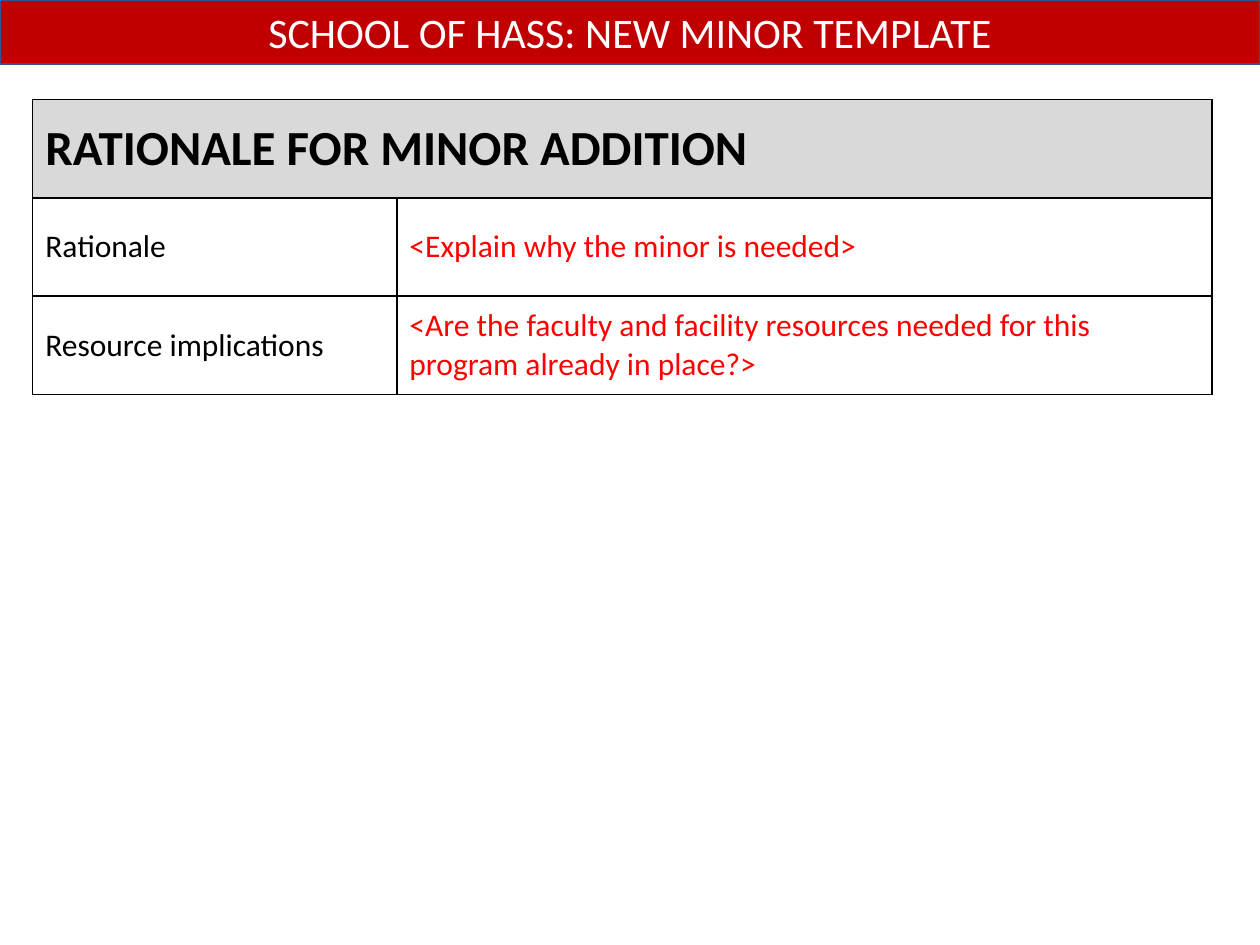
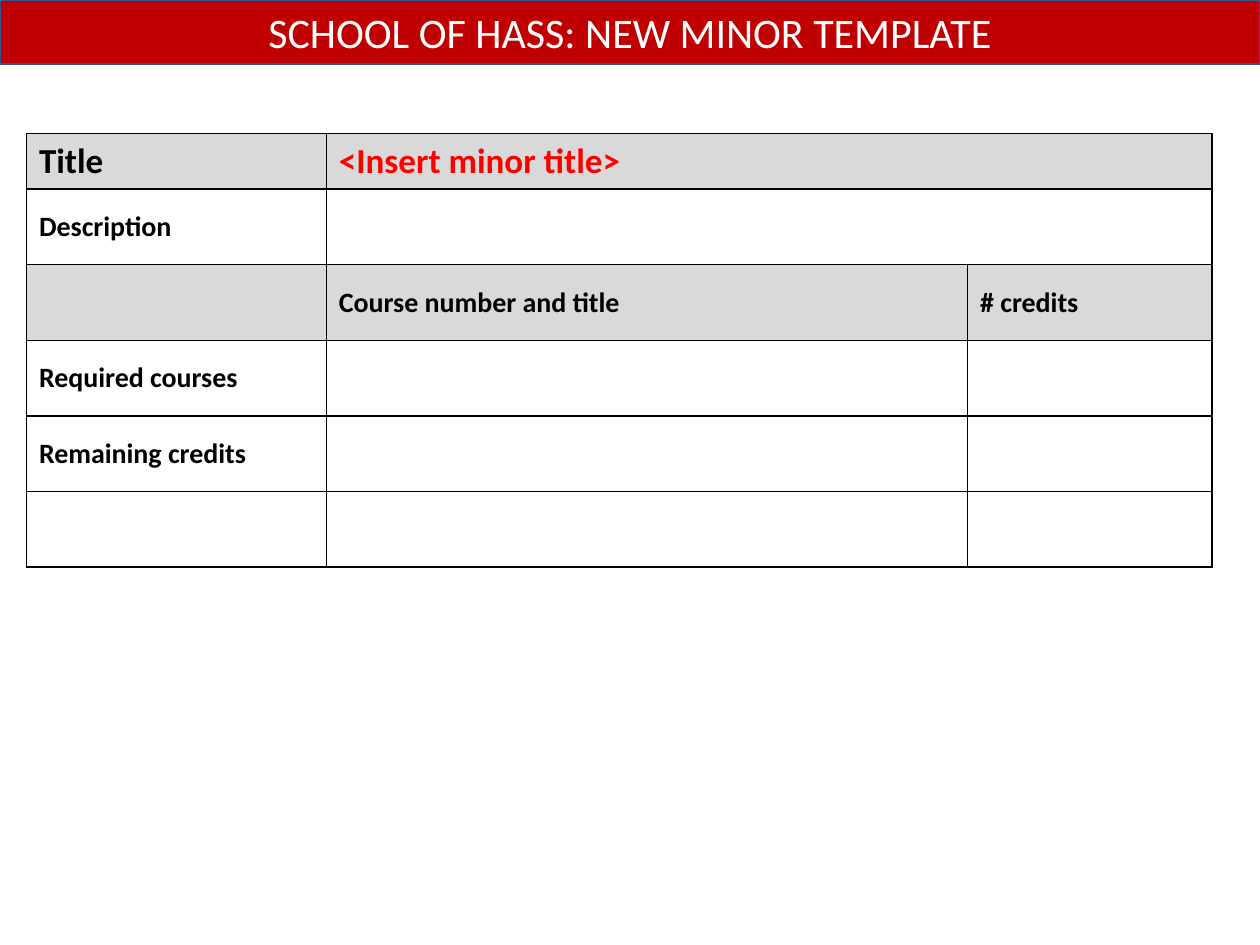
from dataclasses import dataclass

from lxml.etree import SubElement
from pptx import Presentation
from pptx.dml.color import RGBColor
from pptx.enum.text import MSO_ANCHOR, MSO_AUTO_SIZE, PP_ALIGN
from pptx.oxml.ns import qn
from pptx.util import Inches, Pt


@dataclass(frozen=True)
class Theme:
    font: str = "Calibri"
    band: str = "C00000"
    band_edge: str = "325491"
    band_text: str = "FFFFFF"
    header: str = "D9D9D9"
    ink: str = "000000"
    prompt: str = "FF0000"
    title: int = 24
    heading: int = 28
    minor_title: int = 20
    body: int = 18
    label: int = 16
    rule: int = 1


THEME = Theme()
SLIDE_SIZE = (10, 7.5)
BAND_HEIGHT = 0.51
SCHOOL_TITLE = "SCHOOL OF HASS: NEW MINOR TEMPLATE"

RATIONALE = {
    "at": (0.26, 0.79),
    "columns": [2.89, 6.47],
    "heights": [0.78] * 3,
    "rows": [
        ["RATIONALE FOR MINOR ADDITION", ""],
        ["Rationale", "<Explain why the minor is needed>"],
        ["Resource implications",
         "<Are the faculty and facility resources needed for this program already in place?>"],
    ],
    "sizes": [THEME.heading, THEME.body, THEME.body],
    "bold_rows": {0},
    "shaded_rows": {0},
    "top_rows": set(),
    "merges": [((0, 0), (0, 1))],
}

MINOR = {
    "at": (0.21, 1.06),
    "columns": [2.38, 5.09, 1.94],
    "heights": [0.43] + [0.6] * 5,
    "rows": [
        ["Title", "<Insert minor title>", ""],
        ["Description", "", ""],
        ["", "Course number and title", "# credits"],
        ["Required courses", "", ""],
        ["Remaining credits", "", ""],
        ["", "", ""],
    ],
    "sizes": [THEME.minor_title] + [THEME.label] * 5,
    "bold_rows": set(range(6)),
    "shaded_rows": {0, 2},
    "top_rows": {0},
    "merges": [((0, 1), (0, 2)), ((1, 1), (1, 2))],
}


def rgb(color):
    return RGBColor.from_string(color)


def add_text(paragraph, words, size, color, bold=False):
    run = paragraph.add_run()
    run.text = words
    run.font.name = THEME.font
    run.font.size = Pt(size)
    run.font.bold = bold
    run.font.color.rgb = rgb(color)


def add_band(slide):
    band = slide.shapes.title
    band.left = band.top = 0
    band.width, band.height = Inches(SLIDE_SIZE[0]), Inches(BAND_HEIGHT)
    band.fill.solid()
    band.fill.fore_color.rgb = rgb(THEME.band)
    band.line.color.rgb = rgb(THEME.band_edge)
    band.line.width = Pt(THEME.rule)
    frame = band.text_frame
    frame.auto_size = MSO_AUTO_SIZE.NONE
    frame.word_wrap = True
    frame.vertical_anchor = MSO_ANCHOR.MIDDLE
    frame.paragraphs[0].alignment = PP_ALIGN.CENTER
    add_text(frame.paragraphs[0], SCHOOL_TITLE, THEME.title, THEME.band_text)


def add_borders(cell):
    properties = cell._tc.get_or_add_tcPr()
    for position, side in enumerate(("a:lnL", "a:lnR", "a:lnT", "a:lnB")):
        border = SubElement(properties, qn(side), w=str(Pt(THEME.rule)))
        fill = SubElement(border, qn("a:solidFill"))
        SubElement(fill, qn("a:srgbClr"), val=THEME.ink)
        properties.insert(position, border)


def add_form(slide, form):
    columns, heights = form["columns"], form["heights"]
    box = (*form["at"], sum(columns), sum(heights))
    table = slide.shapes.add_table(
        len(heights), len(columns), *map(Inches, box)).table
    table.first_row = table.horz_banding = False
    for column, width in zip(table.columns, columns):
        column.width = Inches(width)
    for r, (words_in_row, size) in enumerate(zip(form["rows"], form["sizes"])):
        table.rows[r].height = Inches(heights[r])
        for c, words in enumerate(words_in_row):
            cell = table.cell(r, c)
            if r in form["shaded_rows"]:
                cell.fill.solid()
                cell.fill.fore_color.rgb = rgb(THEME.header)
            else:
                cell.fill.background()
            add_borders(cell)
            cell.vertical_anchor = (
                MSO_ANCHOR.TOP if r in form["top_rows"] else MSO_ANCHOR.MIDDLE)
            if words:
                color = THEME.prompt if words.startswith("<") else THEME.ink
                add_text(cell.text_frame.paragraphs[0], words, size, color,
                         r in form["bold_rows"])
    for first, last in form["merges"]:
        table.cell(*first).merge(table.cell(*last))


def main():
    deck = Presentation()
    deck.slide_width, deck.slide_height = map(Inches, SLIDE_SIZE)
    title_only = deck.slide_layouts[5]
    for form in (RATIONALE, MINOR):
        slide = deck.slides.add_slide(title_only)
        add_band(slide)
        add_form(slide, form)
    deck.save("out.pptx")


if __name__ == "__main__":
    main()
